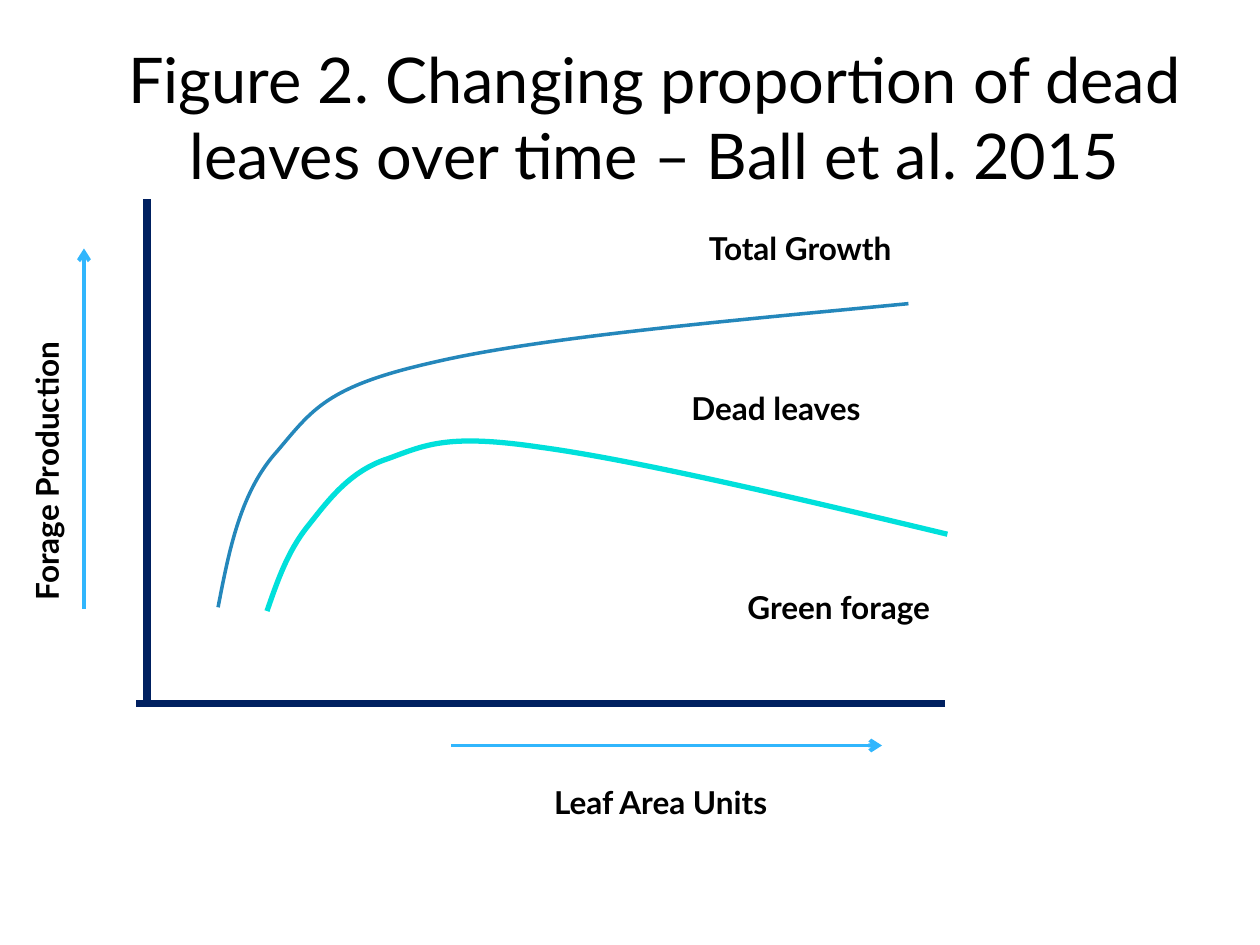
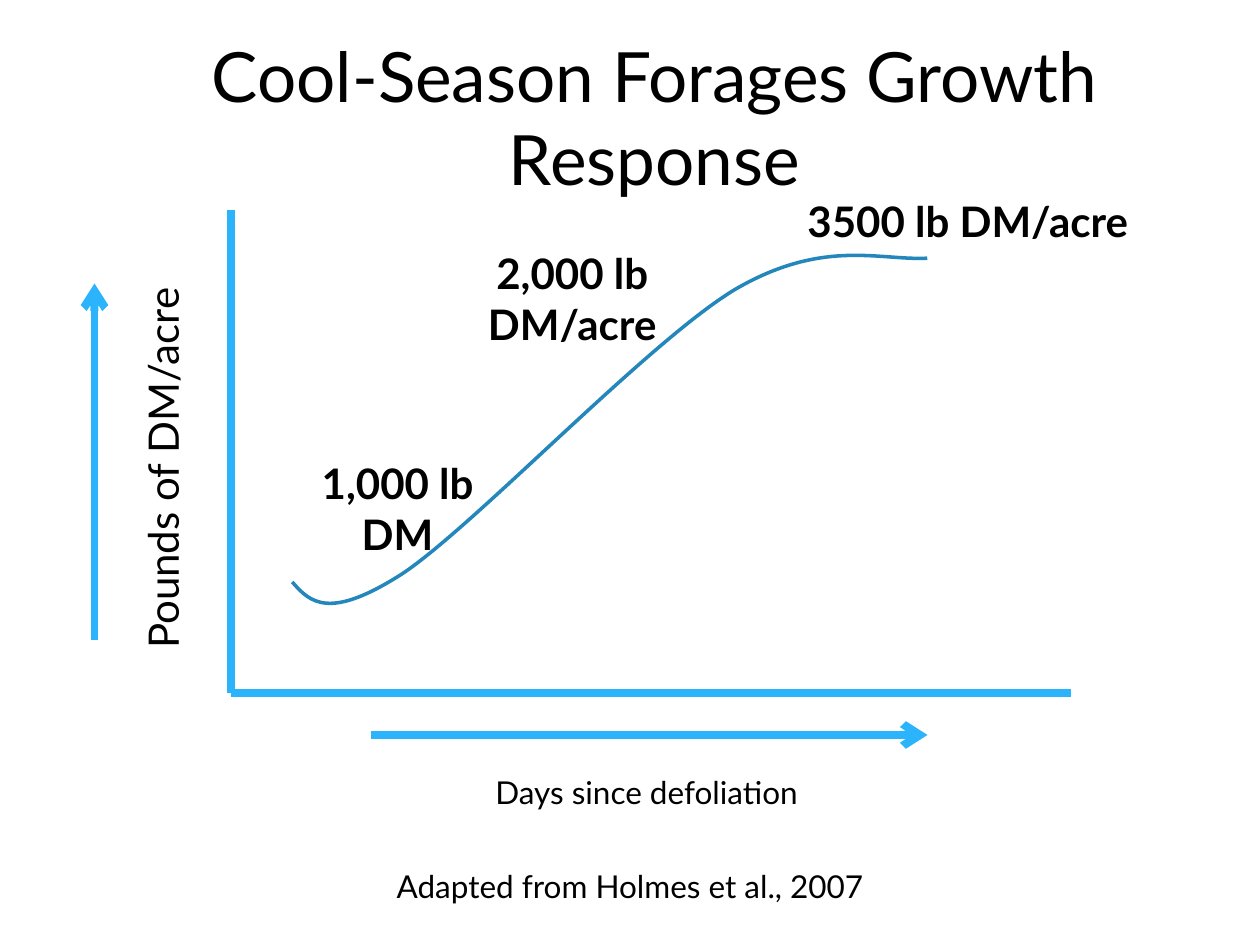
from lxml import etree
from pptx import Presentation
from pptx.dml.color import RGBColor
from pptx.enum.shapes import MSO_CONNECTOR
from pptx.enum.text import MSO_ANCHOR, PP_ALIGN
from pptx.oxml.ns import qn
from pptx.util import Pt

STRAIGHT = MSO_CONNECTOR.STRAIGHT
MIDDLE, TOP = MSO_ANCHOR.MIDDLE, MSO_ANCHOR.TOP
LEFT, CENTER = PP_ALIGN.LEFT, PP_ALIGN.CENTER

FONT = "Lato"
COLORS = {
    "text": "000000",
    "navy": "002060",
    "sky": "31B6FD",
    "bright": "2BB4FC",
    "blue": "2487BB",
    "turquoise": "00E0DB",
}
TITLE_BOX = (64, 21.6, 620, 90)

# Lines: start, end. Curves: start point, then two control points and an end
# point for each segment. Labels: text, box, size, bold, alignment, rotation.
SLIDES = [
    {
        "title": ("Figure 2. Changing proportion of dead leaves over time – Ball et al. 2015", 36),
        "axes": [((84, 114), (84, 402)), ((540, 402), (78, 402))],
        "axis_style": ("navy", 4.5),
        "arrows": [((258, 426), (504, 426)), ((48, 348), (48, 142))],
        "arrow_style": ("sky", 2.25),
        "curves": [
            ("blue", 2, [
                (124.6, 347),
                (131, 313.9), (137.5, 280.8), (158.4, 257.8),
                (178.6, 234), (186.5, 221), (246.2, 207.4),
                (306.7, 193), (413.3, 183.6), (519.1, 173.5),
            ]),
            ("turquoise", 3, [
                (152.6, 349.2),
                (158.4, 332.6), (164.2, 315.4), (175.7, 301),
                (187.2, 286.6), (199.4, 269.3), (221.8, 262.1),
                (243.4, 254.2), (255.6, 247.7), (308.9, 255.6),
                (362.2, 262.8), (451.4, 283.7), (541.4, 305.3),
            ]),
        ],
        "labels": [
            ("Dead leaves", (388, 219, 126, 29), 18, True, LEFT, 0),
            ("Green forage", (420, 332.6, 126, 51), 18, True, LEFT, 0),
            ("Total Growth", (398, 127.5, 126, 29), 18, True, LEFT, 0),
            ("Forage Production", (-99.4, 209.5, 252, 29), 18, True, LEFT, 270),
            ("Leaf Area Units", (294, 444.2, 167, 30), 18, True, CENTER, 0),
        ],
    },
    {
        "title": ("Cool-Season Forages Growth Response", 39.6),
        "axes": [((132, 120), (132, 396)), ((132, 396), (612, 396))],
        "axis_style": ("bright", 4.5),
        "arrows": [((54, 366), (54, 162)), ((212, 420), (530, 420))],
        "arrow_style": ("bright", 4.5),
        "curves": [
            ("blue", 2, [
                (167, 332.6),
                (177.1, 344.2), (187.9, 355), (230.4, 327.6),
                (272.2, 299.5), (370.1, 195.8), (419.8, 165.6),
                (470.2, 136.1), (502.6, 149), (529.9, 147.6),
            ]),
        ],
        "labels": [
            ("Pounds of DM/acre", (-27.4, 239.8, 240, 36), 24, False, LEFT, 270),
            ("Days since defoliation", (276, 438, 216, 29), 18, False, LEFT, 0),
            ("1,000 lb DM", (169.2, 258, 116, 65.5), 24, True, CENTER, 0),
            ("3500 lb DM/acre", (454.3, 108, 248, 36), 24, True, LEFT, 0),
            ("Adapted from Holmes et al., 2007", (219.6, 492, 310, 29), 18, False, LEFT, 0),
            ("2,000 lb DM/acre", (252, 138, 150, 65.5), 24, True, CENTER, 0),
        ],
    },
]


def style_line(line, color, width):
    line.color.rgb = RGBColor.from_string(COLORS[color])
    line.width = Pt(width)


def add_text(slide, text, box, size, bold=False, align=LEFT, rotation=0, anchor=TOP):
    shape = slide.shapes.add_textbox(*map(Pt, box))
    shape.rotation = rotation
    frame = shape.text_frame
    frame.word_wrap = True
    frame.vertical_anchor = anchor
    paragraph = frame.paragraphs[0]
    paragraph.alignment = align
    run = paragraph.add_run()
    run.text = text
    run.font.name = FONT
    run.font.size = Pt(size)
    run.font.bold = bold
    run.font.color.rgb = RGBColor.from_string(COLORS["text"])


def add_line(slide, start, end, color, width, arrow=False):
    connector = slide.shapes.add_connector(STRAIGHT, *map(Pt, start + end))
    style_line(connector.line, color, width)
    properties = connector._element.spPr
    if arrow:
        etree.SubElement(properties.find(qn("a:ln")), qn("a:tailEnd"), type="arrow")
    etree.SubElement(properties, qn("a:effectLst"))


def bezier_point(corners, t):
    weights = ((1 - t) ** 3, 3 * t * (1 - t) ** 2, 3 * t ** 2 * (1 - t), t ** 3)
    return tuple(sum(w * corner[axis] for w, corner in zip(weights, corners)) for axis in (0, 1))


def add_curve(slide, color, width, points, steps=20):
    """Size a freeform by points along the curve, then give it true Bézier segments."""
    starts = range(0, len(points) - 1, 3)
    samples = [bezier_point(points[i:i + 4], step / steps)
               for i in starts for step in range(1, steps + 1)]
    builder = slide.shapes.build_freeform(Pt(points[0][0]), Pt(points[0][1]))
    builder.add_line_segments([(Pt(x), Pt(y)) for x, y in samples], close=False)
    shape = builder.convert_to_shape()
    shape.shadow.inherit = False
    shape.fill.background()
    style_line(shape.line, color, width)

    outline = next(shape._element.iter(qn("a:path")))
    for segment in outline.findall(qn("a:lnTo")):
        outline.remove(segment)
    for i in starts:
        segment = etree.SubElement(outline, qn("a:cubicBezTo"))
        for x, y in points[i + 1:i + 4]:
            etree.SubElement(segment, qn("a:pt"),
                             x=str(Pt(x) - shape.left), y=str(Pt(y) - shape.top))


def build_slide(presentation, content):
    slide = presentation.slides.add_slide(presentation.slide_layouts[6])
    title, size = content["title"]
    add_text(slide, title, TITLE_BOX, size, align=CENTER, anchor=MIDDLE)
    for start, end in content["axes"]:
        add_line(slide, start, end, *content["axis_style"])
    for curve in content["curves"]:
        add_curve(slide, *curve)
    for start, end in content["arrows"]:
        add_line(slide, start, end, *content["arrow_style"], arrow=True)
    for label in content["labels"]:
        add_text(slide, *label)


def main():
    presentation = Presentation()
    presentation.slide_width, presentation.slide_height = Pt(720), Pt(540)
    for content in SLIDES:
        build_slide(presentation, content)
    presentation.save("out.pptx")


if __name__ == "__main__":
    main()
